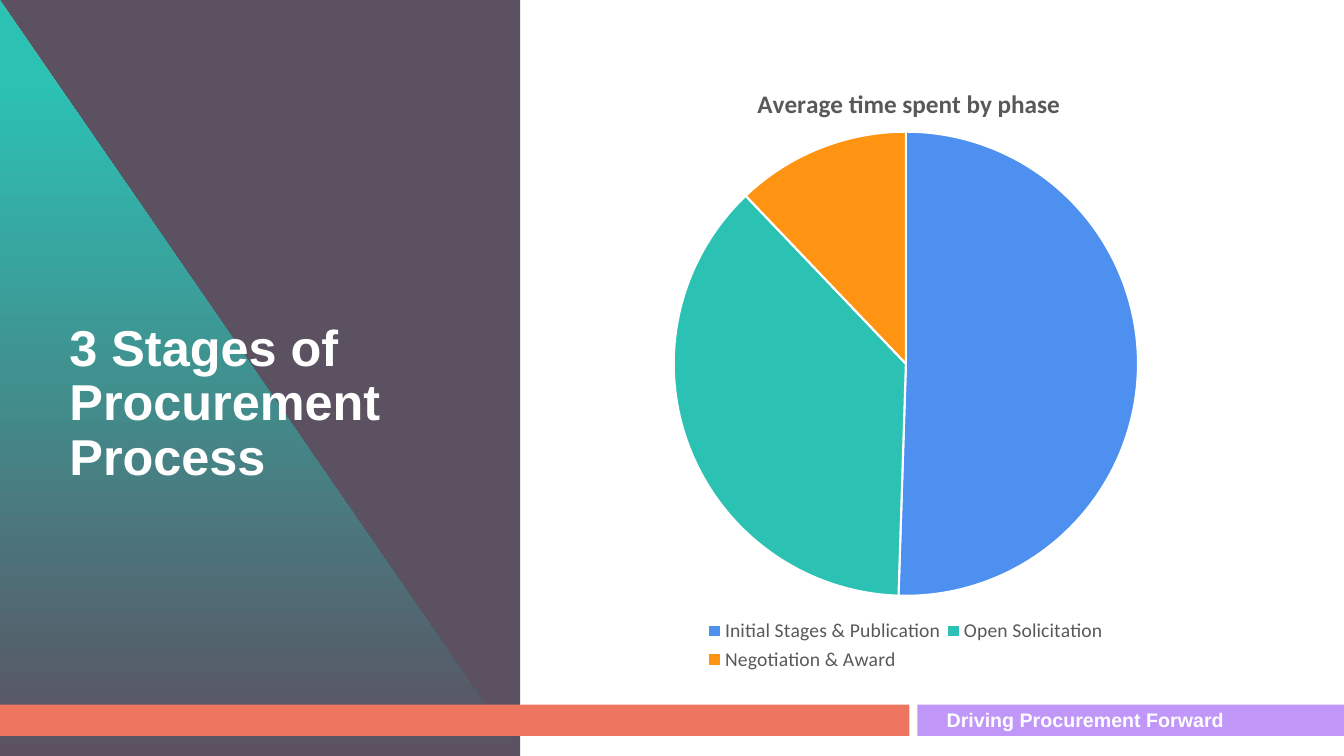
from lxml import etree
from pptx import Presentation
from pptx import util as u
from pptx.chart.data import CategoryChartData
from pptx.dml.color import RGBColor
from pptx.enum import chart as charts, shapes, text
from pptx.oxml.ns import qn

PLUM = RGBColor(0x5B, 0x51, 0x60)
TEAL = RGBColor(0x2B, 0xC2, 0xB4)
CORAL = RGBColor(0xEE, 0x76, 0x60)
LILAC = RGBColor(0xC0, 0x97, 0xF8)
BLUE = RGBColor(0x4D, 0x90, 0xEF)
ORANGE = RGBColor(0xFF, 0x94, 0x13)
GRAY = RGBColor(0x59, 0x59, 0x59)
WHITE = RGBColor(0xFF, 0xFF, 0xFF)

WIDTH, HEIGHT = 13.33, 7.5
PANEL_WIDTH = 5.16
BAR_TOP, BAR_HEIGHT = 6.99, 0.31
BAR_SPLIT, BAR_GAP = 9.02, 0.08


def box(left, top, width, height):
    return [u.Inches(value) for value in (left, top, width, height)]


def set_layout(parent, index, **shares):
    for existing in parent.findall(qn("c:layout")):
        parent.remove(existing)
    layout = etree.Element(qn("c:layout"))
    manual = etree.SubElement(layout, qn("c:manualLayout"))
    if index == 0:
        etree.SubElement(manual, qn("c:layoutTarget")).set("val", "inner")
    for name in ("xMode", "yMode"):
        etree.SubElement(manual, qn("c:" + name)).set("val", "edge")
    for name, share in shares.items():
        etree.SubElement(manual, qn("c:" + name)).set("val", str(share))
    parent.insert(index, layout)


presentation = Presentation()
presentation.slide_width = u.Inches(WIDTH)
presentation.slide_height = u.Inches(HEIGHT)
slide = presentation.slides.add_slide(presentation.slide_layouts[6])

RIGHT_TRIANGLE = shapes.MSO_SHAPE.RIGHT_TRIANGLE
RECTANGLE = shapes.MSO_SHAPE.RECTANGLE
lilac_left = BAR_SPLIT + BAR_GAP
for kind, place, rotation, color in (
    (RIGHT_TRIANGLE, (0, 0, PANEL_WIDTH, HEIGHT), 180, PLUM),
    (RIGHT_TRIANGLE, (0, 0, PANEL_WIDTH, HEIGHT), 0, None),
    (RECTANGLE, (0, BAR_TOP, BAR_SPLIT, BAR_HEIGHT), 0, CORAL),
    (RECTANGLE, (lilac_left, BAR_TOP, WIDTH - lilac_left, BAR_HEIGHT), 0, LILAC),
):
    shape = slide.shapes.add_shape(kind, *box(*place))
    shape.rotation = rotation
    shape.shadow.inherit = False
    shape.line.fill.background()
    if color is None:
        shape.fill.gradient()
        shape.fill.gradient_angle = 270
        for stop, position, stop_color in zip(shape.fill.gradient_stops, (0.1, 1), (TEAL, PLUM)):
            stop.position = position
            stop.color.rgb = stop_color
    else:
        shape.fill.solid()
        shape.fill.fore_color.rgb = color

for words, place, size, spacing in (
    ("Driving Procurement Forward", (9.29, 6.97, 3.31, 0.34), 14, 1),
    ("3 Stages of Procurement Process", (0.59, 1.43, 3.98, 5.17), 36, 0.9),
):
    frame = slide.shapes.add_textbox(*box(*place)).text_frame
    frame.word_wrap = True
    frame.vertical_anchor = text.MSO_ANCHOR.MIDDLE
    paragraph = frame.paragraphs[0]
    paragraph.text = words
    paragraph.line_spacing = spacing
    paragraph.font.name = "Arial"
    paragraph.font.size = u.Pt(size)
    paragraph.font.bold = True
    paragraph.font.color.rgb = WHITE

data = CategoryChartData()
data.categories = ["Initial Stages & Publication", "Open Solicitation", "Negotiation & Award"]
data.add_series("Series 1", (50, 37, 12))
chart = slide.shapes.add_chart(
    charts.XL_CHART_TYPE.PIE, *box(5.37, 0.57, 7.23, 6.14), data
).chart
chart.font.name = "Calibri"
chart.font.size = u.Pt(14)
chart.font.color.rgb = GRAY

chart.has_title = True
title_frame = chart.chart_title.text_frame
title_frame.text = "Average time spent by phase"
title_font = title_frame.paragraphs[0].font
title_font.name = "Calibri"
title_font.size = u.Pt(18)
title_font.bold = True
title_font.color.rgb = GRAY

chart.has_legend = True
chart.legend.position = charts.XL_LEGEND_POSITION.BOTTOM
chart.legend.include_in_layout = False

plot = chart.plots[0]
plot.vary_by_categories = True
for index, color in enumerate((BLUE, TEAL, ORANGE)):
    point = plot.series[0].points[index]
    point.format.fill.solid()
    point.format.fill.fore_color.rgb = color
    point.format.line.color.rgb = WHITE
    point.format.line.width = u.Pt(1.5)

chart_area = chart.element.find(qn("c:chart"))
set_layout(chart_area.find(qn("c:title")), 1, x=0.29, y=0.04)
set_layout(chart_area.find(qn("c:plotArea")), 0, x=0.18, y=0.12, w=0.64, h=0.75)
set_layout(chart_area.find(qn("c:legend")), 1, x=0.22, y=0.9, w=0.56, h=0.1)

presentation.save("out.pptx")
